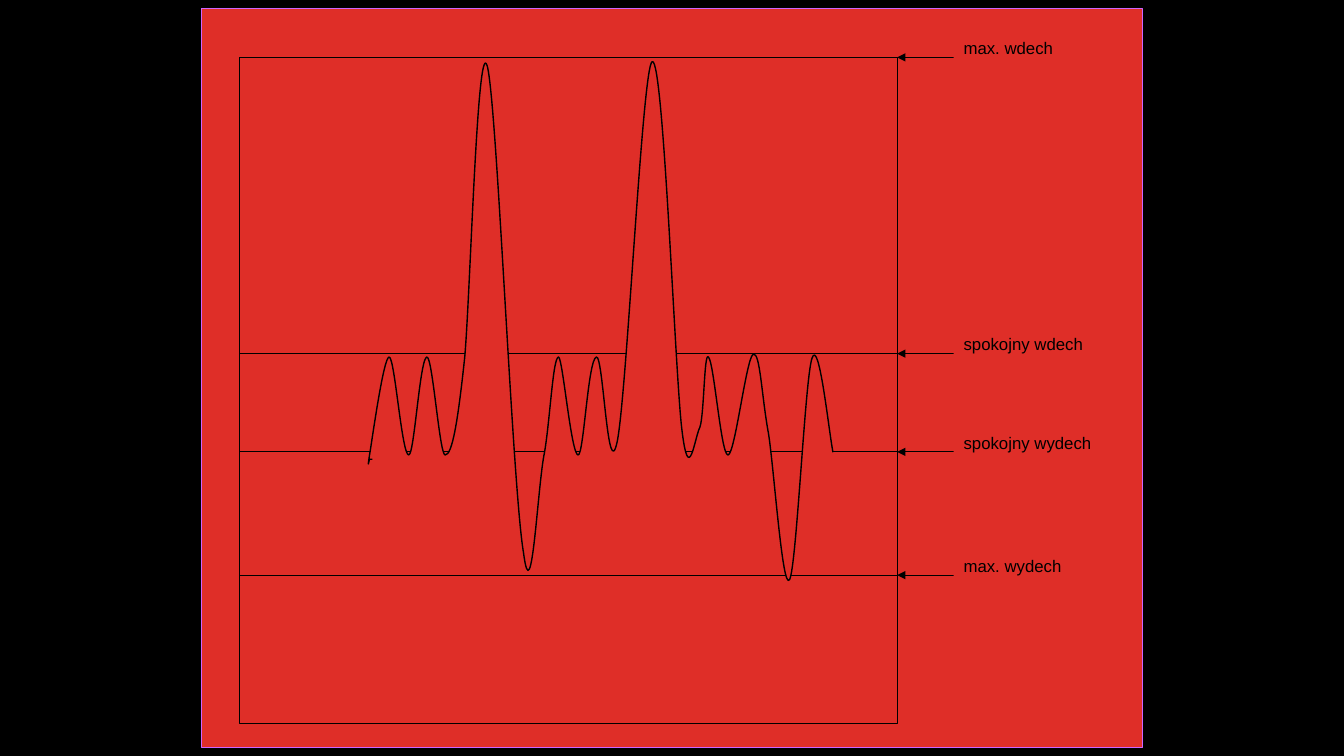
import pptx
import pptx.dml.color
import pptx.enum.shapes
import pptx.enum.text
import pptx.oxml
import pptx.oxml.ns
import pptx.util
from lxml import etree

# Content: label, height of its level, label width
LEVELS = [
    ("max. wdech", 41, 107),
    ("spokojny wdech", 252.6, 121),
    ("spokojny wydech", 322.8, 134),
    ("max. wydech", 410.8, 107),
]
PLOT_BOTTOM = 517

# Breathing curve: start, then two control points and an end point per segment
CURVE_START = (266.4, 327.6)
CURVE = [
    (265.7, 327.6, 264.2, 327.6, 264.2, 327.6),
    (263.5, 326.9, 262.1, 337.7, 264.2, 325.4),
    (266.4, 313.2, 273.6, 254.9, 277.9, 254.9),
    (282.2, 254.9, 286.6, 325.4, 291.6, 325.4),
    (295.9, 325.4, 300.2, 254.9, 304.6, 254.9),
    (308.9, 254.9, 313.9, 325.4, 318.2, 325.4),
    (322.6, 325.4, 326.9, 301.7, 331.9, 254.9),
    (336.2, 208.8, 340.6, 23.8, 347.8, 46.8),
    (355, 70.6, 366.5, 349.2, 373.7, 395.3),
    (380.2, 441.4, 384.5, 345.6, 388.8, 322.6),
    (393.1, 298.8, 394.6, 254.9, 398.9, 254.9),
    (402.5, 255.6, 407.5, 325.4, 412.6, 325.4),
    (416.9, 325.4, 420.5, 257, 425.5, 254.9),
    (430.6, 253.4, 434.2, 349.2, 441.4, 314.6),
    (447.8, 279.4, 458.6, 45.4, 465.8, 43.9),
    (473.8, 42.5, 481.7, 262.8, 486.7, 306),
    (492.5, 349.2, 496.1, 313.2, 499.7, 304.6),
    (502.6, 295.9, 503.3, 251.3, 506.2, 254.9),
    (509.8, 258.5, 514.8, 325.4, 519.8, 325.4),
    (524.9, 325.4, 532.8, 255.6, 537.8, 253.4),
    (542.9, 250.6, 544.3, 283, 548.6, 309.6),
    (553, 336.2, 558.7, 423.4, 563.8, 414),
    (568.8, 405.4, 574.6, 270.7, 580.3, 255.6),
    (585.4, 240.5, 591.8, 308.2, 595.4, 322.6),
]

RED, BLACK, VIOLET = "DF2E28", "000000", "CC66FF"
PLOT_LEFT, PLOT_RIGHT = 170.8, 640.8
LABEL_LEFT, LABEL_HEIGHT, LABEL_RISE = 681.2, 52.5, 17.5

Pt = pptx.util.Pt
qn = pptx.oxml.ns.qn


def paint(color_format, color):
    color_format.rgb = pptx.dml.color.RGBColor.from_string(color)


def style(shape, line=None, width=0.75):
    shape.shadow.inherit = False
    shape.fill.solid()
    paint(shape.fill.fore_color, RED)
    if line:
        shape.line.fill.solid()
        paint(shape.line.fill.fore_color, line)
        shape.line.width = Pt(width)
    else:
        shape.line.fill.background()


def add_box(left, top, width, height, line=None):
    box = slide.shapes.add_shape(
        pptx.enum.shapes.MSO_SHAPE.RECTANGLE, Pt(left), Pt(top), Pt(width), Pt(height))
    style(box, line)
    return box


def add_arrow(y):
    arrow = slide.shapes.add_connector(
        pptx.enum.shapes.MSO_CONNECTOR.STRAIGHT, Pt(LABEL_LEFT), Pt(y), Pt(PLOT_RIGHT), Pt(y))
    paint(arrow.line.color, BLACK)
    arrow.line.width = Pt(0.75)
    etree.SubElement(arrow.line._get_or_add_ln(), qn("a:tailEnd"), type="triangle")
    etree.SubElement(arrow._element.spPr, qn("a:effectLst"))


def add_label(text, y, width):
    box = add_box(LABEL_LEFT, y - LABEL_RISE, width, LABEL_HEIGHT)
    frame = box.text_frame
    frame.word_wrap = True
    frame.vertical_anchor = pptx.enum.text.MSO_ANCHOR.TOP
    paragraph = frame.paragraphs[0]
    paragraph.alignment = pptx.enum.text.PP_ALIGN.LEFT
    run = paragraph.add_run()
    run.text = text
    run.font.name = "Arial"
    run.font.size = Pt(12)
    paint(run.font.color, BLACK)


def add_curve():
    points = [(s[i], s[i + 1]) for s in CURVE for i in (0, 2, 4)]
    builder = slide.shapes.build_freeform(*CURVE_START, scale=Pt(1))
    builder.add_line_segments(points, close=False)
    curve = builder.convert_to_shape()
    style(curve, BLACK, 1)
    # Join every three straight segments into one Bezier segment
    steps = list(curve._element.iter(qn("a:lnTo")))
    for first in range(0, len(steps), 3):
        bezier = etree.Element(qn("a:cubicBezTo"))
        steps[first].addprevious(bezier)
        for step in steps[first:first + 3]:
            bezier.append(step[0])
            step.getparent().remove(step)


# Slide
deck = pptx.Presentation()
deck.slide_width, deck.slide_height = Pt(960), Pt(540)
slide = deck.slides.add_slide(deck.slide_layouts[6])
slide.background.fill.solid()
paint(slide.background.fill.fore_color, BLACK)

# Panel and bands between levels
add_box(144, 6, 672, 528, VIOLET)
edges = [y for _, y, _ in LEVELS] + [PLOT_BOTTOM]
for top, bottom in zip(edges, edges[1:]):
    add_box(PLOT_LEFT, top, PLOT_RIGHT - PLOT_LEFT, bottom - top, BLACK)

# Level arrows and labels
for text, y, width in LEVELS:
    add_arrow(y)
    add_label(text, y, width)

add_curve()
deck.save("out.pptx")
